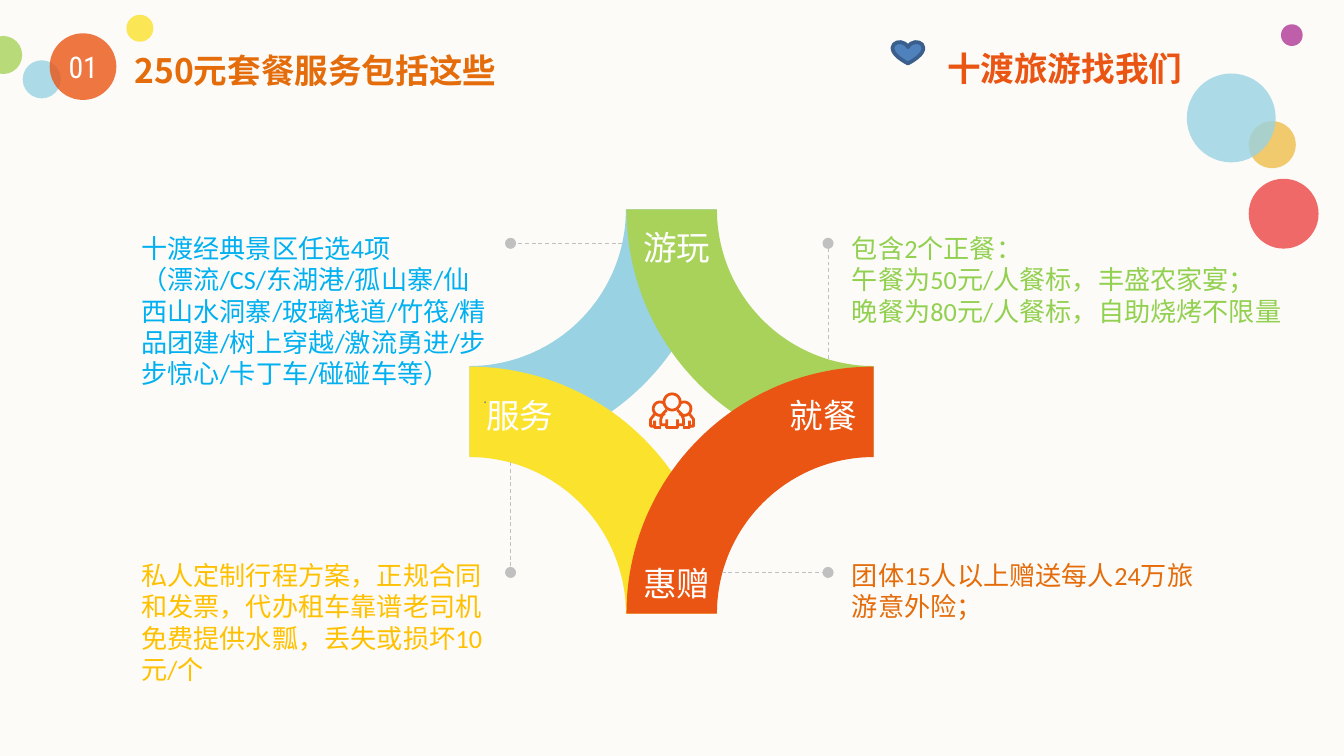
from math import cos, sin, radians

from lxml.etree import SubElement
from pptx import Presentation
from pptx.dml.color import RGBColor
from pptx.enum.dml import MSO_LINE
from pptx.enum.shapes import MSO_CONNECTOR as LINK, MSO_SHAPE as KIND
from pptx.enum.text import MSO_ANCHOR, MSO_AUTO_SIZE as FIT, PP_ALIGN as ALIGN
from pptx.oxml.ns import qn
from pptx.util import Cm, Pt

BLUE, YELLOW, GREEN, ORANGE = "98D2E3", "FBE22D", "A9D25A", "EA5514"


def paint(fmt, hue, alpha=100):
    """Apply a hex colour to a fill or a font, with opacity in percent."""
    if hasattr(fmt, "solid"):
        fmt.solid()
        fmt = fmt.fore_color
    else:
        fmt = fmt.color
    fmt.rgb = RGBColor.from_string(hue)
    if alpha < 100:
        tag = fmt._xFill.find(qn("a:srgbClr"))
        SubElement(tag, qn("a:alpha"), val=str(alpha * 1000))


def style(para, size, hue, font="Calibri", bold=False, align=ALIGN.LEFT):
    para.font.size, para.font.name, para.font.bold = Pt(size), font, bold
    para.alignment = align
    paint(para.font, hue)


def text(slide, x, y, w, h, lines, size, hue, inset=0.0, wrap=True, **look):
    box = slide.shapes.add_textbox(Cm(x), Cm(y), Cm(w), Cm(h))
    frame = box.text_frame
    frame.word_wrap, frame.auto_size = wrap, FIT.SHAPE_TO_FIT_TEXT
    frame.margin_left = frame.margin_right = Cm(inset)
    frame.margin_top = frame.margin_bottom = Cm(inset / 2)
    frame.text = "\n".join(lines)
    for para in frame.paragraphs:
        style(para, size, hue, **look)
    return frame


def label(slide, x, y, w, word, hue="FFFFFF", **look):
    text(slide, x, y, w, 1.02, [word], 18, hue, inset=0.25, wrap=False, **look)


def dot(slide, x, y, size, hue, alpha=80):
    ball = slide.shapes.add_shape(KIND.OVAL, Cm(x), Cm(y), Cm(size), Cm(size))
    ball.shadow.inherit = False
    paint(ball.fill, hue, alpha)
    ball.line.fill.background()


def arc(x, y, r, start, end, steps=48):
    turn = [radians(start + (end - start) * i / steps) for i in range(steps + 1)]
    return [(x + r * cos(a), y + r * sin(a)) for a in turn]


def outline(slide, paths, closed):
    """Build one freeform from lists of points in centimetres."""
    mil = [[(x * 1000, y * 1000) for x, y in path] for path in paths]
    pen = slide.shapes.build_freeform(*mil[0][0], scale=360)
    for i, path in enumerate(mil):
        if i:
            pen.move_to(*path[0])
        pen.add_line_segments(path[1:], close=closed)
    form = pen.convert_to_shape()
    form.shadow.inherit = False
    return form


def group_icon(slide, x, y, unit):
    """Three people on a grid 34 units wide, mirrored about the middle."""
    half = [
        [(13, 13), (10, 16), (8.5, 20), (8.5, 24), (13, 24), (13, 20)],
        [(13, 24), (13, 26), (17, 26)],
        arc(8, 12, 5, -50, -315),
        [(4, 16), (1, 20), (1, 25), (4, 25), (4, 21)],
        [(4, 25), (4, 26), (9, 26)],
    ]
    flip = [[(34 - px, py) for px, py in path] for path in half]
    paths = [arc(17, 7, 6, 0, 360)] + half + flip
    place = [[(x + px * unit, y + py * unit) for px, py in p] for p in paths]
    form = outline(slide, place, False)
    form.fill.background()
    paint(form.line.fill, ORANGE)
    form.line.width = Pt(1.5)


def leader(slide, x1, y1, x2, y2):
    link = slide.shapes.add_connector(
        LINK.STRAIGHT, Cm(x1), Cm(y1), Cm(x2), Cm(y2))
    paint(link.line.fill, "C0C0C0")
    link.line.width, link.line.dash_style = Pt(0.5), MSO_LINE.DASH
    SubElement(link.line._get_or_add_ln(), qn("a:tailEnd"), type="oval")
    SubElement(link._element.spPr, qn("a:effectLst"))


def ring(slide, x, y, side):
    """Four quarter bands, each centred on a corner of the square."""
    outer, inner = 4.67, 2.96
    for dx, dy, start, hue in ((0, 0, 0, BLUE), (0, 1, 270, YELLOW),
                               (1, 0, 90, GREEN), (1, 1, 180, ORANGE)):
        cx, cy = x + dx * side, y + dy * side
        band = (arc(cx, cy, outer, start, start + 90)
                + arc(cx, cy, inner, start + 90, start))
        form = outline(slide, [band], True)
        paint(form.fill, hue)
        form.line.fill.background()
    group_icon(slide, x + 3.4, y + 3.46, 0.0254)

    # Dashed leaders to the notes
    left, right, top, low = x + 0.78, x + 6.78, y + 0.64, y + 6.86
    leader(slide, x + 2.89, top, left, top)
    leader(slide, left, y + 4.78, left, low)
    leader(slide, x + 4.77, low, right, low)
    leader(slide, right, y + 2.82, right, top)

    # Band names
    for dx, dy, word in ((3.04, 0.2, "游玩"), (5.81, 3.38, "就餐"),
                         (0.07, 3.38, "服务"), (3.04, 6.56, "惠赠")):
        label(slide, x + dx, y + dy, 1.8, word)


def notes(slide, x, y):
    right, low = x + 13.43, y + 6.18
    text(slide, right, y, 8.13, 1.8, [
        "包含2个正餐：", "午餐为50元/人餐标，丰盛农家宴；",
        "晚餐为80元/人餐标，自助烧烤不限量"], 14, "92D050")
    text(slide, right, low, 6.6, 1.2,
         ["团体15人以上赠送每人24万旅游意外险；"], 14, "E46C0A")
    spots = text(slide, x, y, 6.6, 3.33, [
        "十渡经典景区任选4项",
        "（漂流/CS/东湖港/孤山寨/仙西山水洞寨/玻璃栈道/竹筏/精品团建/"
        "树上穿越/激流勇进/步步惊心/卡丁车/碰碰车等）", ". "], 14, "00B0F0")
    style(spots.paragraphs[-1], 8, "7F7F7F", align=ALIGN.RIGHT)
    text(slide, x, low, 6.6, 2.4, [
        "私人定制行程方案，正规合同和发票，代办租车靠谱老司机",
        "免费提供水瓢，丢失或损坏10元/个"], 14, "FFC000")


def heading(slide, x, y):
    for dx, dy, size, hue in ((2.39, 0.28, 0.51, YELLOW), (-0.3, 0.68, 0.72, GREEN),
                              (0.43, 1.14, 0.72, BLUE), (0.94, 0.63, 1.26, ORANGE)):
        dot(slide, x + dx, y + dy, size, hue)
    text(slide, x + 1.12, y + 0.92, 0.91, 0.69, ["01"], 16, "FFFFFF",
         font="Roboto Condensed", align=ALIGN.CENTER)
    title = slide.shapes.title
    title.left, title.top = Cm(x + 2.54), Cm(y + 0.94)
    title.width, title.height = Cm(7.72), Cm(0.76)
    frame = title.text_frame
    frame.text = "250元套餐服务包括这些"
    frame.margin_left = frame.margin_right = 0
    frame.margin_top = frame.margin_bottom = 0
    frame.vertical_anchor, frame.auto_size = MSO_ANCHOR.TOP, FIT.NONE
    style(frame.paragraphs[0], 18, "E46C0A", "Noto Sans CJK JP", True)


def corner(slide, x, y):
    for dx, dy, size, hue, alpha in (
            (7.34, 0.46, 0.41, "B03896", 80), (6.73, 2.29, 0.89, "F0CA6C", 100),
            (6.73, 3.38, 1.32, "EB4544", 80), (5.56, 1.39, 1.68, BLUE, 80)):
        dot(slide, x + dx, y + dy, size, hue, alpha)
    label(slide, x + 0.78, y + 0.79, 5.16, "十渡旅游找我们", ORANGE, bold=True)
    heart = slide.shapes.add_shape(
        KIND.HEART, Cm(x), Cm(y + 0.79), Cm(0.58), Cm(0.41))
    heart.shadow.inherit = False
    paint(heart.fill, "4F81BD")
    paint(heart.line.fill, "3A5F8C")
    heart.line.width = Pt(2)


def main():
    deck = Presentation()
    deck.slide_width, deck.slide_height = Cm(25.4), Cm(14.29)
    slide = deck.slides.add_slide(deck.slide_layouts.get_by_name("Title Only"))
    paint(slide.background.fill, "FCFBF7")
    ring(slide, 8.87, 3.96, 7.64)
    notes(slide, 2.67, 4.39)
    heading(slide, 0, 0)
    corner(slide, 16.87, 0)
    deck.save("out.pptx")


if __name__ == "__main__":
    main()
